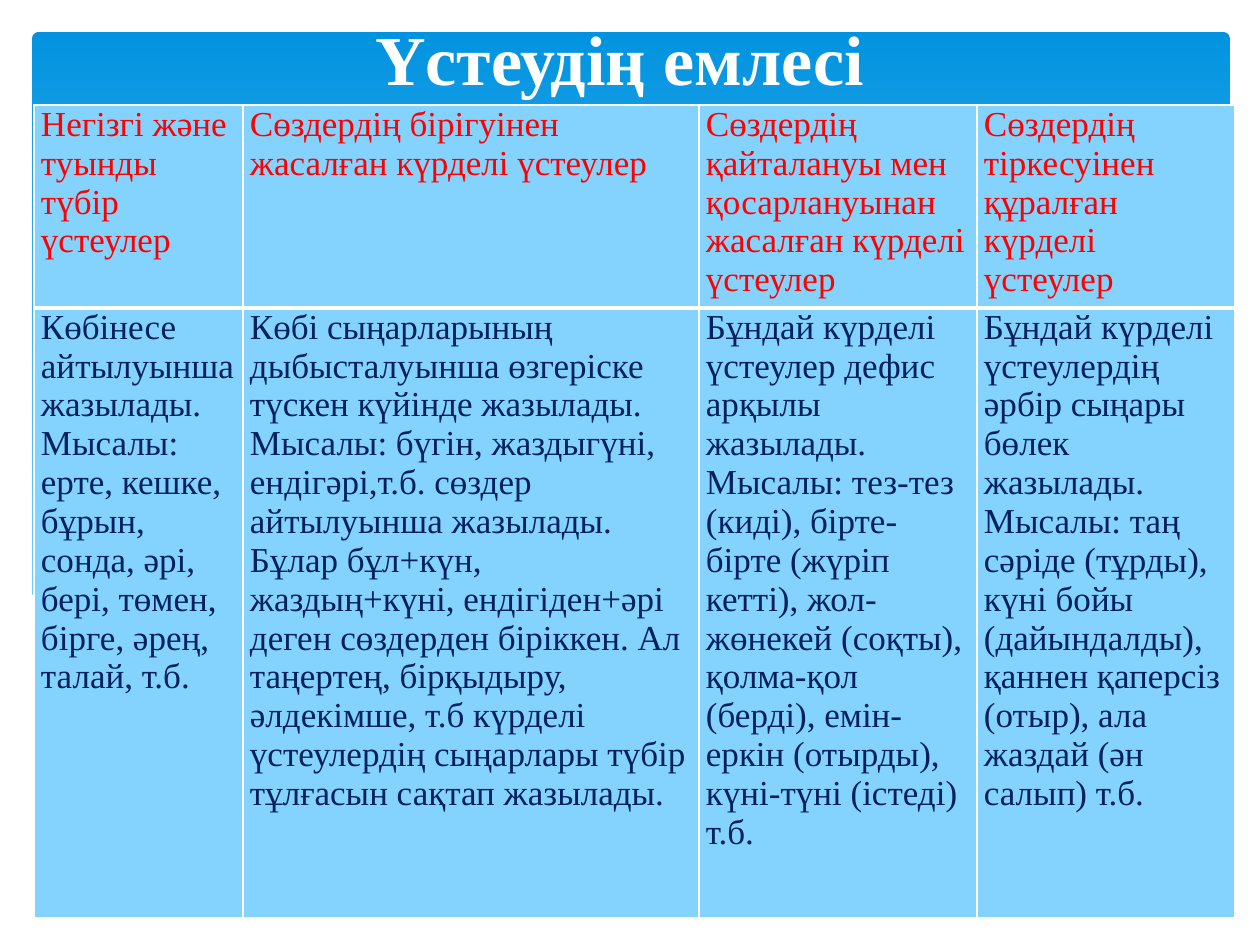
from lxml import etree
from pptx import Presentation
from pptx.dml.color import RGBColor
from pptx.enum.shapes import MSO_SHAPE
from pptx.enum.text import MSO_ANCHOR, PP_ALIGN
from pptx.oxml.ns import qn
from pptx.util import Emu, Pt

ROUNDED = MSO_SHAPE.ROUNDED_RECTANGLE
BOTTOM = MSO_ANCHOR.BOTTOM
CENTER = PP_ALIGN.CENTER

THEME = {
    "font": "Times New Roman", "title_size": 40, "cell_size": 20,
    "white": "FFFFFF", "panel_top": "0293E0", "pale": "83D3FE",
    "header": "FF0000", "body": "002060",
}
TITLE = "Үстеудің емлесі"
COLUMN_WIDTHS = [209, 456, 278, 258]
ROW_HEIGHTS = [203, 610]
ROWS = [
    [
        "Негізгі және туынды түбір үстеулер",
        "Сөздердің бірігуінен жасалған күрделі үстеулер",
        "Сөздердің қайталануы мен қосарлануынан жасалған күрделі үстеулер",
        "Сөздердің тіркесуінен құралған күрделі үстеулер",
    ],
    [
        "Көбінесе айтылуынша жазылады. Мысалы:\n"
        "ерте, кешке, бұрын, сонда, әрі, бері, төмен, бірге, әрең, талай, т.б.",
        "Көбі сыңарларының дыбысталуынша өзгеріске түскен күйінде жазылады. "
        "Мысалы: бүгін, жаздыгүні, ендігәрі,т.б. сөздер айтылуынша жазылады. "
        "Бұлар бұл+күн, жаздың+күні, ендігіден+әрі деген сөздерден біріккен. "
        "Ал таңертең, бірқыдыру, әлдекімше, т.б күрделі үстеулердің сыңарлары "
        "түбір тұлғасын сақтап жазылады.",
        "Бұндай күрделі үстеулер дефис арқылы жазылады. Мысалы: тез-тез (киді), "
        "бірте-бірте (жүріп кетті), жол-жөнекей (соқты), қолма-қол (берді), "
        "емін-еркін (отырды), күні-түні (істеді) т.б.",
        "Бұндай күрделі үстеулердің әрбір сыңары бөлек жазылады. Мысалы: таң "
        "сәріде (тұрды), күні бойы (дайындалды), қаннен қаперсіз (отыр), ала "
        "жаздай (ән салып) т.б.",
    ],
]


def px(length):
    return Emu(round(length * 914400 / 126))


def format_text(text_frame, size, color, bold=False):
    values = {"name": THEME["font"], "size": Pt(size), "bold": bold}
    for paragraph in text_frame.paragraphs:
        for run in paragraph.runs:
            for name, value in values.items():
                setattr(run.font, name, value)
            run.font.color.rgb = RGBColor.from_string(color)


presentation = Presentation()
presentation.slide_width, presentation.slide_height = px(1260), px(945)
slide = presentation.slides.add_slide(presentation.slide_layouts[5])

# Gradient panel
panel = slide.shapes.add_shape(ROUNDED, px(32), px(32), px(1198), px(653))
panel.shadow.inherit = False
panel.adjustments[0] = 0.01
panel.line.fill.background()
panel.fill.gradient()
panel.fill.gradient_angle = 270
for stop, color in zip(panel.fill.gradient_stops, ("panel_top", "pale")):
    stop.color.rgb = RGBColor.from_string(THEME[color])

# White wave along the foot of the panel
wave_points = [(90, 577), (180, 561), (260, 560), (360, 567), (460, 583),
               (563, 605), (700, 636), (816, 658), (936, 673), (1055, 676),
               (1159, 665), (1231, 638), (1231, 742), (29, 742)]
builder = slide.shapes.build_freeform(29, 596, scale=px(1))
builder.add_line_segments(wave_points, close=True)
wave = builder.convert_to_shape()
wave.shadow.inherit = False
wave.line.fill.background()
wave.fill.solid()
wave.fill.fore_color.rgb = RGBColor.from_string(THEME["white"])

# Title, brought in front of the panel
title = slide.shapes.title
slide.shapes._spTree.append(title._element)
title.left, title.top, title.width, title.height = px(35), px(26), px(1169), px(80)
title.text_frame.text = TITLE
for name, value in {"vertical_anchor": BOTTOM, "margin_top": 0,
                    "margin_bottom": px(6), "word_wrap": True}.items():
    setattr(title.text_frame, name, value)
title.text_frame.paragraphs[0].alignment = CENTER
format_text(title.text_frame, THEME["title_size"], THEME["white"], bold=True)

# Table of spelling rules
table = slide.shapes.add_table(
    len(ROWS), len(COLUMN_WIDTHS), px(34), px(105),
    px(sum(COLUMN_WIDTHS)), px(sum(ROW_HEIGHTS))).table
for column, width in zip(table.columns, COLUMN_WIDTHS):
    column.width = px(width)
for row, height in zip(table.rows, ROW_HEIGHTS):
    row.height = px(height)

# Side margins leave the longest word of the first column on one line
margins = {"margin_left": px(7), "margin_right": px(7),
           "margin_top": 0, "margin_bottom": 0}
for row_index, texts in enumerate(ROWS):
    is_header = row_index == 0
    for column_index, text in enumerate(texts):
        cell = table.cell(row_index, column_index)
        cell.text = text
        for name, value in margins.items():
            setattr(cell, name, value)
        format_text(cell.text_frame, THEME["cell_size"],
                    THEME["header" if is_header else "body"])

        # White borders, heavier between the header and the body
        properties = cell._tc.get_or_add_tcPr()
        for side in ("lnL", "lnR", "lnT", "lnB"):
            heavy = side == ("lnB" if is_header else "lnT")
            line = etree.SubElement(properties, qn("a:" + side),
                                    w=str(Pt(3 if heavy else 1)))
            fill = etree.SubElement(line, qn("a:solidFill"))
            etree.SubElement(fill, qn("a:srgbClr"), val=THEME["white"])
        cell.fill.solid()
        cell.fill.fore_color.rgb = RGBColor.from_string(THEME["pale"])

presentation.save("out.pptx")
